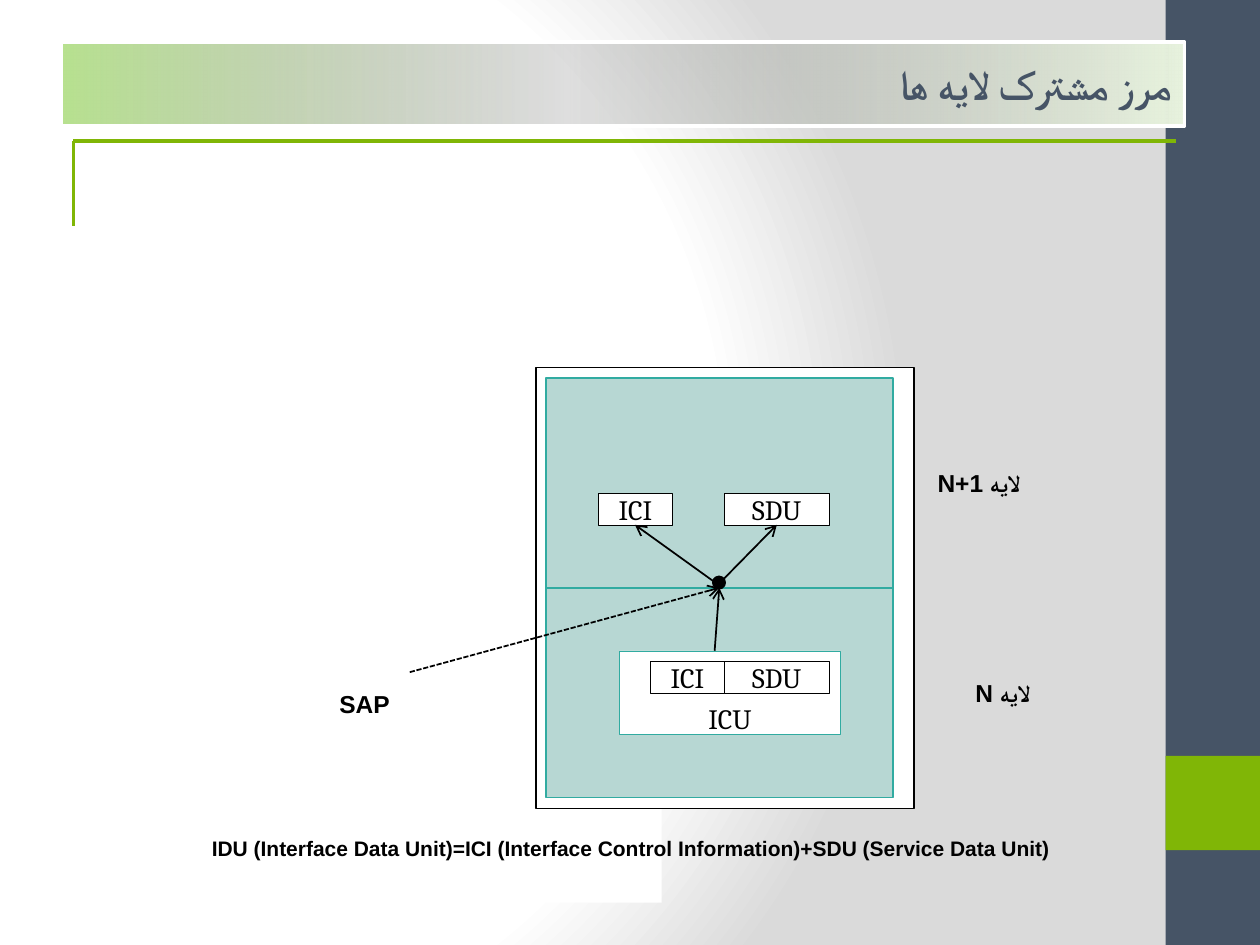
from lxml import etree
from pptx import Presentation
from pptx.dml.color import RGBColor
from pptx.enum import dml, shapes, text
from pptx.oxml.ns import qn
from pptx.util import Cm, Pt

COLORS = {
    "white": "FFFFFF", "black": "000000", "backdrop": "DADADA",
    "slate": "465466", "green": "80B606", "layer": "B7D7D3", "teal": "31ABA1",
    "band_start": "B8E290", "band_middle": "999999", "band_end": "E9F4DF",
}


def rgb(name):
    return RGBColor.from_string(COLORS[name])


def set_gradient(grad, stops, circle=False):
    """Fill a gradFill element with (percent, colour, opacity percent) stops."""
    for child in list(grad):
        grad.remove(child)
    stop_list = etree.SubElement(grad, qn("a:gsLst"))
    for position, color, opacity in stops:
        stop = etree.SubElement(stop_list, qn("a:gs"), pos=str(position * 1000))
        value = etree.SubElement(stop, qn("a:srgbClr"), val=COLORS[color])
        if opacity < 100:
            etree.SubElement(value, qn("a:alpha"), val=str(opacity * 1000))
    if circle:
        shade = etree.SubElement(grad, qn("a:path"), {"path": "circle"})
        etree.SubElement(shade, qn("a:fillToRect"),
                         l="20000", t="50000", r="100000", b="50000")
    else:
        etree.SubElement(grad, qn("a:lin"), ang="0", scaled="0")


def style_paragraph(paragraph, size, face, color="black", bold=False,
                    align=text.PP_ALIGN.LEFT, rtl=False):
    paragraph.alignment = align
    if rtl:
        paragraph._p.get_or_add_pPr().set("rtl", "1")
    font = paragraph.font
    font.size, font.name, font.bold = Pt(size), face, bold
    font.color.rgb = rgb(color)
    etree.SubElement(font._element, qn("a:cs"), typeface=face)


def add_box(slide, left, top, width, height, fill, line=None, weight=1,
            label=None, anchor=text.MSO_ANCHOR.MIDDLE,
            kind=shapes.MSO_SHAPE.RECTANGLE):
    box = slide.shapes.add_shape(kind, Cm(left), Cm(top), Cm(width), Cm(height))
    box.shadow.inherit = False
    box.fill.solid()
    box.fill.fore_color.rgb = rgb(fill)
    if line:
        box.line.color.rgb = rgb(line)
        box.line.width = Pt(weight)
    else:
        box.line.fill.background()
    if label:
        frame = box.text_frame
        frame.margin_left = frame.margin_right = 0
        frame.margin_top = frame.margin_bottom = 0
        frame.vertical_anchor = anchor
        frame.text = label
        style_paragraph(frame.paragraphs[0], 16, "Cambria",
                        align=text.PP_ALIGN.CENTER)
    return box


def add_line(slide, start, end, color="black", weight=1, arrow=False, dashed=False):
    line = slide.shapes.add_connector(
        shapes.MSO_CONNECTOR.STRAIGHT, *(Cm(value) for value in start + end))
    line.line.color.rgb = rgb(color)
    line.line.width = Pt(weight)
    if dashed:
        line.line.dash_style = dml.MSO_LINE.SQUARE_DOT
    if arrow:
        etree.SubElement(line.line._get_or_add_ln(), qn("a:tailEnd"), type="arrow")
    etree.SubElement(line._element.spPr, qn("a:effectLst"))


def add_label(slide, left, top, width, height, words, size=14, wrap=False,
              align=text.PP_ALIGN.RIGHT, rtl=False):
    frame = slide.shapes.add_textbox(
        Cm(left), Cm(top), Cm(width), Cm(height)).text_frame
    frame.word_wrap = wrap
    frame.text = words
    style_paragraph(frame.paragraphs[0], size, "Arial", bold=True,
                    align=align, rtl=rtl)


def add_background(slide):
    slide.background.fill.gradient()
    set_gradient(slide._element.find(".//" + qn("a:gradFill")),
                 [(0, "white", 100), (75, "white", 100), (100, "backdrop", 100)],
                 circle=True)
    add_box(slide, 23.5, 0, 1.9, 19.05, "slate")
    add_box(slide, 23.5, 15.24, 1.9, 1.9, "green")
    corner = (1.48, 2.84)
    add_line(slide, (1.48, 4.55), corner, "green", 2)
    add_line(slide, corner, (23.7, 2.84), "green", 2)


def add_title(slide, words):
    title = slide.shapes.title
    title.left, title.top = Cm(1.23), Cm(0.85)
    title.width, title.height = Cm(22.65), Cm(1.69)
    title.fill.gradient()
    set_gradient(title._element.spPr.find(qn("a:gradFill")),
                 [(0, "band_start", 100), (45, "band_middle", 32),
                  (100, "band_end", 100)])
    title.line.color.rgb = rgb("white")
    title.line.width = Pt(2)
    frame = title.text_frame
    frame.auto_size = text.MSO_AUTO_SIZE.NONE
    frame.vertical_anchor = text.MSO_ANCHOR.MIDDLE
    frame.text = words
    style_paragraph(frame.paragraphs[0], 24, "Calibri", "slate", bold=True,
                    align=text.PP_ALIGN.RIGHT, rtl=True)
    # Bring the title in front of the sidebar
    slide.shapes._spTree.append(title._element)


def add_units(slide, ici_left, top):
    """Add an ICI box and an SDU box on one row."""
    for label, left, width in (("ICI", ici_left, 1.48), ("SDU", 14.6, 2.12)):
        add_box(slide, left, top, width, 0.64, "white", "black", 0.5, label)


def add_layers(slide):
    # Frame and the two layers
    add_box(slide, 9.74, 15.66, 3.6, 2.54, "white")
    add_box(slide, 10.8, 7.41, 7.62, 8.89, "white", "black")
    layer_height = 4.23
    for row in range(2):
        add_box(slide, 11.01, 7.62 + row * layer_height, 6.99, layer_height,
                "layer", "teal")

    # Service access point and the units passing through it
    access_point = (14.5, 11.85)
    add_units(slide, 12.07, 9.95)
    add_line(slide, (14.39, 13.34), access_point, arrow=True)
    add_box(slide, 14.39, 11.64, 0.21, 0.21, "black", "black", 2,
            kind=shapes.MSO_SHAPE.OVAL)
    add_line(slide, (14.58, 11.68), (15.66, 10.58), arrow=True)
    add_line(slide, (14.4, 11.73), (12.8, 10.58), arrow=True)
    add_box(slide, 12.49, 13.12, 4.45, 1.69, "white", "teal", 0.25, "ICU",
            text.MSO_ANCHOR.BOTTOM)
    add_units(slide, 13.12, 13.34)
    add_line(slide, (8.26, 13.55), access_point, arrow=True, dashed=True)


def add_captions(slide):
    add_label(slide, 19.41, 13.55, 1.6, 0.86, "لایه N", wrap=True, rtl=True)
    add_label(slide, 18.63, 9.31, 2.18, 0.86, "لایه N+1", wrap=True, rtl=True)
    add_label(slide, 6.56, 13.76, 1.55, 0.86, "SAP")
    add_label(slide, 4.02, 16.72, 17.67, 0.76,
              "IDU (Interface Data Unit)=ICI (Interface Control Information)"
              "+SDU (Service Data Unit)", size=12, align=text.PP_ALIGN.LEFT)


def main():
    deck = Presentation()
    deck.slide_width, deck.slide_height = Cm(25.4), Cm(19.05)
    slide = deck.slides.add_slide(deck.slide_layouts[5])
    add_background(slide)
    add_title(slide, "مرز مشترک لایه ها")
    add_layers(slide)
    add_captions(slide)
    deck.save("out.pptx")


if __name__ == "__main__":
    main()
